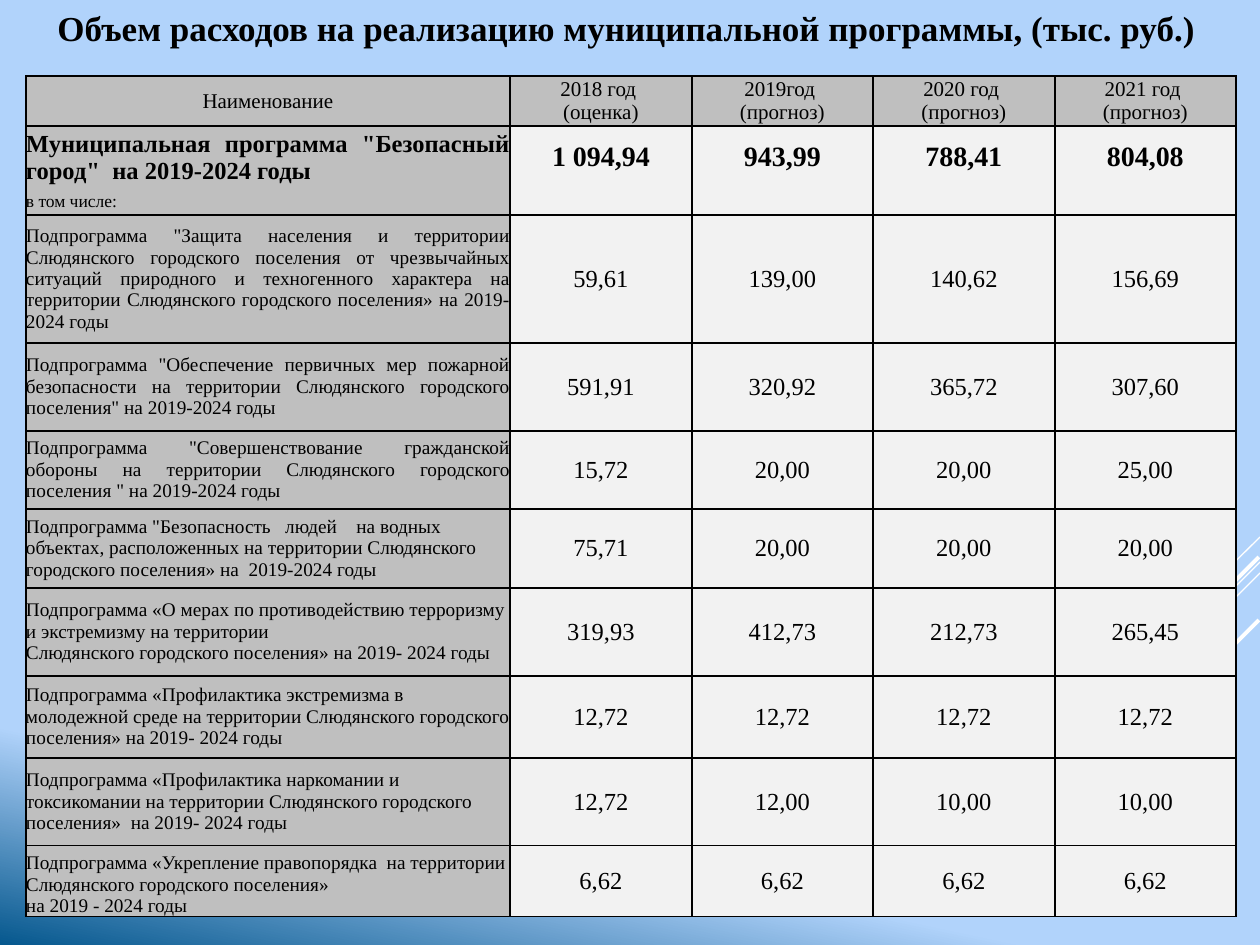
from dataclasses import dataclass

from lxml import etree
from pptx import Presentation
from pptx.dml.color import RGBColor
from pptx.enum.shapes import MSO_CONNECTOR
from pptx.enum.text import MSO_ANCHOR, PP_ALIGN
from pptx.oxml.ns import qn
from pptx.util import Emu, Pt

STRAIGHT = MSO_CONNECTOR.STRAIGHT
MIDDLE, BOTTOM = MSO_ANCHOR.MIDDLE, MSO_ANCHOR.BOTTOM
LEFT, CENTER, JUSTIFY = PP_ALIGN.LEFT, PP_ALIGN.CENTER, PP_ALIGN.JUSTIFY
EMU_PER_PX = 914400 / 126


@dataclass(frozen=True)
class Theme:
    font: str = "Times New Roman"
    ink: str = "000000"
    label_fill: str = "BFBFBF"
    value_fill: str = "F2F2F2"
    sky: str = "B1D3FB"
    deep: str = "06588E"
    streak: str = "FFFFFF"
    title: int = 20
    total: int = 16
    value: int = 14
    header: int = 12
    label: int = 11
    note: int = 10


@dataclass(frozen=True)
class Streak:
    x1: int
    y1: int
    x2: int
    y2: int
    width: float


@dataclass(frozen=True)
class Row:
    height: int
    label: str
    values: tuple[str, ...]
    align: PP_ALIGN = LEFT
    label_size: int = Theme.label
    value_size: int = Theme.value
    bold: bool = False
    value_fill: str = Theme.value_fill
    anchor: MSO_ANCHOR = MIDDLE
    sides: str = "LRTB"


THEME = Theme()
TITLE = "Объем расходов на реализацию муниципальной программы, (тыс. руб.)"
COLUMNS = (484, 182, 181, 182, 181)
STREAKS = (
    Streak(1260, 537, 1155, 641, 0.75),
    Streak(1260, 562, 920, 903, 0.75),
    Streak(1260, 573, 1043, 790, 0.75),
    Streak(1259, 557, 1061, 755, 2.25),
    Streak(1259, 620, 1115, 764, 2.25),
)
# In a label or value, "\n" starts a new paragraph and "\v" a new line.
ROWS = (
    Row(50, "Наименование",
        ("2018 год \n(оценка)", "2019год \n(прогноз)", "2020 год \n(прогноз)", "2021 год \n(прогноз)"),
        CENTER, THEME.header, THEME.header, value_fill=THEME.label_fill),
    Row(63, 'Муниципальная программа "Безопасный город"  на 2019-2024 годы',
        ("1 094,94", "943,99", "788,41", "804,08"),
        JUSTIFY, THEME.value, THEME.total, bold=True, sides="LRT"),
    Row(26, "в том числе:", ("", "", "", ""), JUSTIFY, THEME.note, THEME.note, sides="LRB"),
    Row(128, 'Подпрограмма "Защита населения и территории Слюдянского городского поселения '
        "от чрезвычайных ситуаций природного и техногенного характера на территории "
        "Слюдянского городского поселения» на 2019-2024 годы ",
        ("59,61", "139,00", "140,62", "156,69"), JUSTIFY),
    Row(88, 'Подпрограмма "Обеспечение первичных мер пожарной безопасности на территории '
        'Слюдянского городского поселения" на 2019-2024 годы',
        ("591,91", "320,92", "365,72", "307,60"), JUSTIFY),
    Row(78, 'Подпрограмма "Совершенствование гражданской обороны на территории '
        'Слюдянского городского поселения " на 2019-2024 годы',
        ("15,72", "20,00", "20,00", "25,00"), JUSTIFY),
    Row(79, 'Подпрограмма "Безопасность   людей    на водных объектах, расположенных '
        "на территории Слюдянского городского поселения» на  2019-2024 годы",
        ("75,71", "20,00", "20,00", "20,00")),
    Row(88, "Подпрограмма «О мерах по противодействию терроризму и экстремизму на территории "
        "\vСлюдянского городского поселения» на 2019- 2024 годы",
        ("319,93", "412,73", "212,73", "265,45")),
    Row(82, "Подпрограмма «Профилактика экстремизма в молодежной среде на территории "
        "Слюдянского городского поселения» на 2019- 2024 годы",
        ("12,72", "12,72", "12,72", "12,72")),
    Row(88, "Подпрограмма «Профилактика наркомании и токсикомании на территории "
        "Слюдянского городского поселения»  на 2019- 2024 годы",
        ("12,72", "12,00", "10,00", "10,00")),
    Row(71, "Подпрограмма «Укрепление правопорядка  на территории Слюдянского городского "
        "поселения»\vна 2019 - 2024 годы",
        ("6,62", "6,62", "6,62", "6,62"), anchor=BOTTOM),
)


def px(n: int) -> Emu:
    return Emu(round(n * EMU_PER_PX))


def rgb(color: str) -> RGBColor:
    return RGBColor.from_string(color)


def write(tf, text: str, size: int, align: PP_ALIGN, bold: bool) -> None:
    for i, paragraph in enumerate(text.split("\n")):
        p = tf.paragraphs[0] if i == 0 else tf.add_paragraph()
        p.alignment = align
        if not paragraph:
            etree.SubElement(p._p, qn("a:endParaRPr"), sz=str(size * 100))
            continue
        for j, line in enumerate(paragraph.split("\v")):
            if j:
                p.add_line_break()
            r = p.add_run()
            r.text = line
            r.font.name, r.font.size, r.font.bold = THEME.font, Pt(size), bold
            r.font.color.rgb = rgb(THEME.ink)


def set_borders(cell, sides: str) -> None:
    """Draw the named sides and hide the others."""
    tc_pr = cell._tc.get_or_add_tcPr()
    for side in "LRTB":
        ln = etree.SubElement(tc_pr, qn(f"a:ln{side}"), w=str(Pt(1)))
        if side in sides:
            fill = etree.SubElement(ln, qn("a:solidFill"))
            etree.SubElement(fill, qn("a:srgbClr"), val=THEME.ink)
        else:
            etree.SubElement(ln, qn("a:noFill"))


def fill_cell(cell, text: str, size: int, align: PP_ALIGN, color: str, anchor: MSO_ANCHOR, row: Row) -> None:
    cell.margin_left = cell.margin_right = cell.margin_top = cell.margin_bottom = 0
    cell.vertical_anchor = anchor
    set_borders(cell, row.sides)
    cell.fill.solid()
    cell.fill.fore_color.rgb = rgb(color)
    write(cell.text_frame, text, size, align, row.bold)


def paint_background(slide) -> None:
    fill = slide.background.fill
    fill.gradient()
    fill.gradient_angle = 258
    for stop, color, position in zip(fill.gradient_stops, (THEME.sky, THEME.deep), (0.82, 1)):
        stop.color.rgb = rgb(color)
        stop.position = position


def add_streak(slide, s: Streak) -> None:
    sp = slide.shapes.add_connector(STRAIGHT, px(s.x1), px(s.y1), px(s.x2), px(s.y2))
    sp.line.color.rgb = rgb(THEME.streak)
    sp.line.width = Pt(s.width)
    etree.SubElement(sp._element.spPr, qn("a:effectLst"))


def add_title(slide) -> None:
    sp = slide.shapes.title
    sp.left, sp.top, sp.width, sp.height = px(26), px(0), px(1201), px(55)
    sp.text_frame.word_wrap = True
    sp.text_frame.vertical_anchor = MIDDLE
    write(sp.text_frame, TITLE, THEME.title, CENTER, True)


def add_expense_table(slide) -> None:
    height = sum(row.height for row in ROWS)
    frame = slide.shapes.add_table(len(ROWS), len(COLUMNS), px(26), px(76), px(sum(COLUMNS)), px(height))
    table = frame.table
    table.first_row = table.horz_banding = False
    for column, width in zip(table.columns, COLUMNS):
        column.width = px(width)
    for i, row in enumerate(ROWS):
        table.rows[i].height = px(row.height)
        fill_cell(table.cell(i, 0), row.label, row.label_size, row.align, THEME.label_fill, row.anchor, row)
        for j, value in enumerate(row.values, 1):
            fill_cell(table.cell(i, j), value, row.value_size, CENTER, row.value_fill, MIDDLE, row)


def main() -> None:
    prs = Presentation()
    prs.slide_width, prs.slide_height = px(1260), px(945)
    slide = prs.slides.add_slide(prs.slide_layouts[5])
    paint_background(slide)
    for streak in STREAKS:
        add_streak(slide, streak)
    add_title(slide)
    add_expense_table(slide)
    prs.save("out.pptx")


if __name__ == "__main__":
    main()
